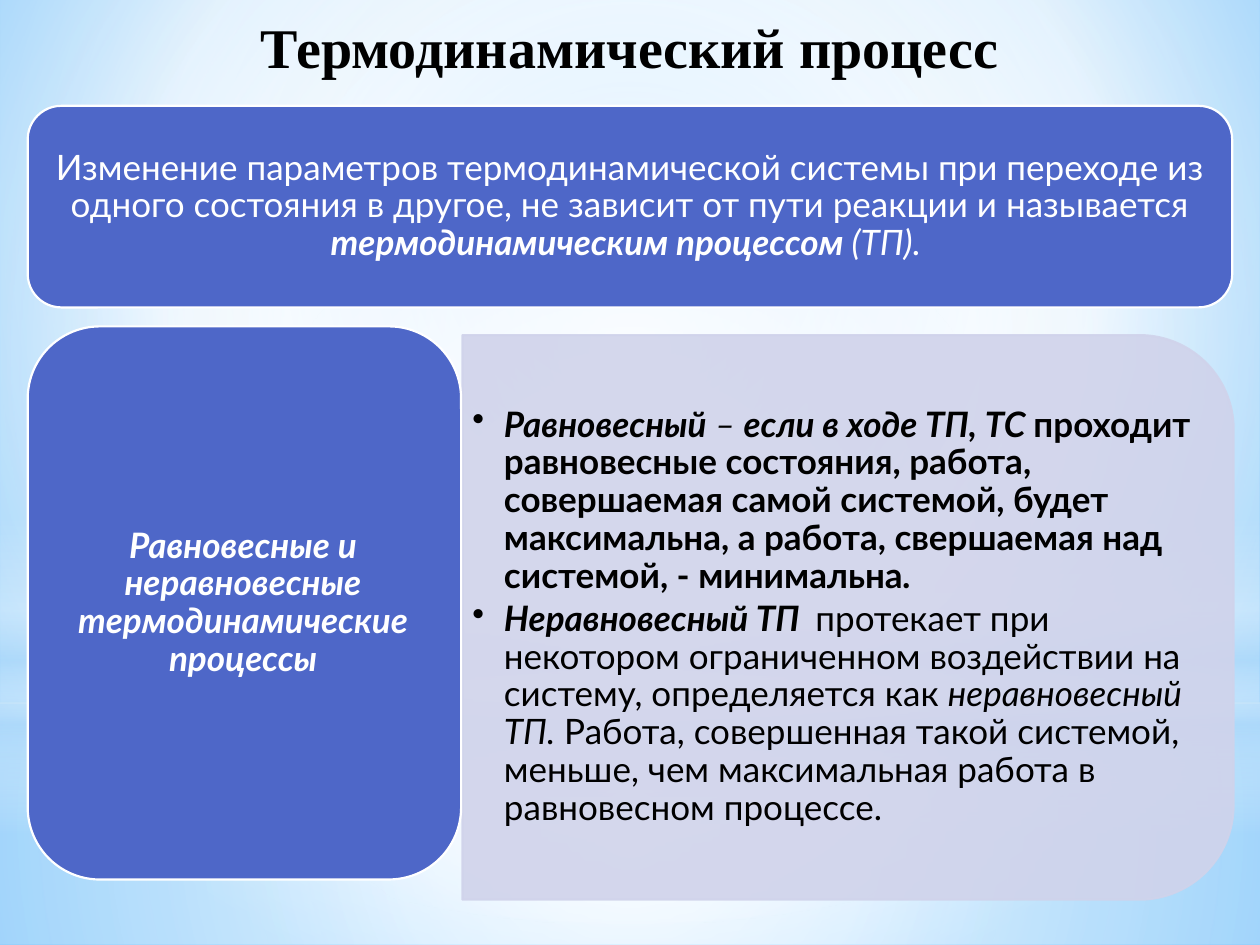
from lxml.etree import SubElement
from pptx import Presentation
from pptx.dml.color import RGBColor
from pptx.enum.shapes import MSO_SHAPE
from pptx.enum.text import MSO_ANCHOR, PP_ALIGN
from pptx.oxml.ns import qn
from pptx.util import Inches, Pt

BLUE, PALE, WHITE, BLACK, SKY = "4E67C8", "D0D3EB", "FFFFFF", "000000", "B4DCFA"
CENTER = (50, 50, 50, 50)

# Gradient stops: position %, colour, opacity %
BACKGROUND = [(0, "9ED5FF", 100), (60, WHITE, 100), (100, "5BB9FF", 100)]
GLOWS = [
    (MSO_SHAPE.RECTANGLE, (0, 5.58, 10, 1.92), CENTER,
     [(0, WHITE, 91), (37, WHITE, 76), (100, SKY, 79)]),
    (MSO_SHAPE.RECTANGLE, (0, 0, 10, 5.58), CENTER,
     [(0, WHITE, 89), (48, WHITE, 62), (100, SKY, 79)]),
    (MSO_SHAPE.RECTANGLE, (0, 4.12, 10, 2.5), None,
     [(0, WHITE, 0), (29, WHITE, 30), (45, SKY, 40),
      (55, WHITE, 26), (65, SKY, 60), (100, WHITE, 0)]),
    (MSO_SHAPE.OVAL, (0, 1.75, 10, 5.58), CENTER,
     [(0, WHITE, 100), (56, WHITE, 0)]),
]

# Paragraphs are lists of (text, style); b is bold, i is italic
TITLE = [[("Термодинамический процесс", "b")]]
DEFINITION = [[
    ("Изменение параметров термодинамической системы при переходе из одного "
     "состояния в другое, не зависит от пути реакции и называется ", ""),
    ("термодинамическим процессом ", "bi"),
    ("(ТП). ", "i"),
]]
KINDS = [[("Равновесные и неравновесные термодинамические процессы", "bi")]]
DETAILS = [
    [("Равновесный", "bi"), (" – ", "i"), ("если в ходе ТП, ТС ", "bi"),
     ("проходит равновесные состояния, работа, совершаемая самой системой, будет "
      "максимальна, а работа, свершаемая над системой, - минимальна", "b"),
     (".", "bi")],
    [("Неравновесный ТП  ", "bi"),
     ("протекает при некотором ограниченном воздействии на систему, "
      "определяется как ", ""),
     ("неравновесный ТП.", "i"),
     (" Работа, совершенная такой системой, меньше, чем максимальная работа в "
      "равновесном процессе.", "")],
]


def rgb(color):
    return RGBColor.from_string(color)


def set_opacity(color_element, percent):
    SubElement(color_element, qn("a:alpha"), val=str(percent * 1000))


def set_gradient(properties, stops, focus):
    """Replace the solid fill; focus is left, top, right, bottom in %, None is vertical."""
    solid = properties.find(qn("a:solidFill"))
    gradient = properties.makeelement(qn("a:gradFill"), {"rotWithShape": "1"})
    properties.replace(solid, gradient)
    stop_list = SubElement(gradient, qn("a:gsLst"))
    for position, color, opacity in stops:
        stop = SubElement(stop_list, qn("a:gs"), pos=str(position * 1000))
        set_opacity(SubElement(stop, qn("a:srgbClr"), val=color), opacity)
    if focus:
        path = SubElement(gradient, qn("a:path"), {"path": "circle"})
        sides = {side: str(value * 1000) for side, value in zip("ltrb", focus)}
        SubElement(path, qn("a:fillToRect"), sides)
    else:
        SubElement(gradient, qn("a:lin"), ang=str(90 * 60000), scaled="0")


def add_panel(page, kind, place, fill, line=None):
    panel = page.shapes.add_shape(kind, *map(Inches, place))
    panel.shadow.inherit = False
    panel.fill.solid()
    panel.fill.fore_color.rgb = rgb(fill)
    if line:
        panel.line.color.rgb = rgb(line)
        panel.line.width = Pt(1.25)
    else:
        panel.line.fill.background()
    return panel


def add_text(page, place, paragraphs, color, size=20, font="Lato", after=7,
             spacing=0.9, anchor=MSO_ANCHOR.MIDDLE, margins=(0.08, 0.04), bullets=False):
    box = page.shapes.add_textbox(*map(Inches, place))
    frame = box.text_frame
    frame.word_wrap = True
    frame.vertical_anchor = anchor
    frame.margin_left = frame.margin_right = Inches(margins[0])
    frame.margin_top = frame.margin_bottom = Inches(margins[1])
    for index, spans in enumerate(paragraphs):
        para = frame.add_paragraph() if index else frame.paragraphs[0]
        para.alignment = PP_ALIGN.LEFT if bullets else PP_ALIGN.CENTER
        para.line_spacing = spacing
        para.space_after = Pt(after)
        if bullets:
            properties = para._p.get_or_add_pPr()
            properties.set("marL", str(Inches(0.25)))
            properties.set("indent", str(-Inches(0.25)))
            SubElement(properties, qn("a:buChar"), char="•")
        for text, style in spans:
            span = para.add_run()
            span.text = text
            span.font.name = font
            span.font.size = Pt(size)
            span.font.color.rgb = rgb(color)
            span.font.bold = "b" in style
            span.font.italic = "i" in style


def main():
    deck = Presentation()
    deck.slide_width, deck.slide_height = Inches(10), Inches(7.5)
    page = deck.slides.add_slide(deck.slide_layouts[6])

    page.background.fill.solid()
    background = next(page._element.iter(qn("p:bgPr")))
    set_gradient(background, BACKGROUND, (20, 10, 20, 60))
    for kind, place, focus, stops in GLOWS:
        glow = add_panel(page, kind, place, WHITE)
        set_gradient(glow._element.spPr, stops, focus)

    add_text(page, (0, 0, 10, 1.25), TITLE, BLACK, size=32, font="Times New Roman",
             after=0, spacing=1, anchor=MSO_ANCHOR.TOP, margins=(0.1, 0.1))

    add_panel(page, MSO_SHAPE.ROUNDED_RECTANGLE, (0.22, 0.84, 9.56, 1.6), BLUE, WHITE)
    add_text(page, (0.3, 0.92, 9.4, 1.44), DEFINITION, WHITE)

    details = add_panel(page, MSO_SHAPE.ROUND_2_SAME_RECTANGLE,
                        (4.49, 1.84, 4.48, 6.12), PALE, PALE)
    details.rotation = 90
    for color in list(details._element.spPr.iter(qn("a:srgbClr"))):
        set_opacity(color, 90)
    add_text(page, (3.67, 2.88, 5.9, 4.04), DETAILS, BLACK, after=3, bullets=True)

    add_panel(page, MSO_SHAPE.ROUNDED_RECTANGLE, (0.22, 2.59, 3.44, 4.39), BLUE, WHITE)
    add_text(page, (0.38, 2.76, 3.1, 4.06), KINDS, WHITE)

    deck.save("out.pptx")


if __name__ == "__main__":
    main()
